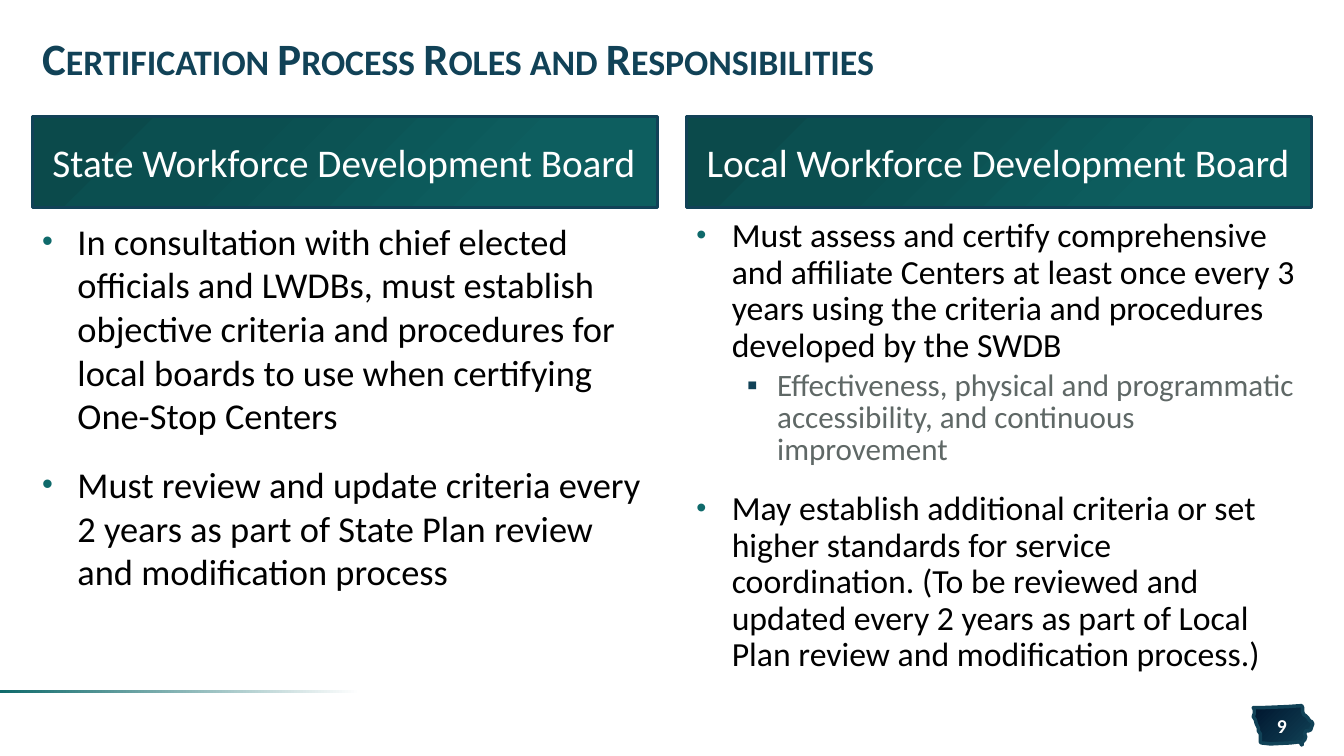
from lxml import etree
from pptx import Presentation
from pptx.dml.color import RGBColor
from pptx.enum.shapes import MSO_SHAPE
from pptx.enum.text import MSO_ANCHOR, PP_ALIGN
from pptx.oxml import parse_xml
from pptx.oxml.ns import qn
from pptx.util import Inches, Pt

RECT = MSO_SHAPE.RECTANGLE
TOP, MIDDLE = MSO_ANCHOR.TOP, MSO_ANCHOR.MIDDLE
LEFT, CENTER = PP_ALIGN.LEFT, PP_ALIGN.CENTER
NS = "http://schemas.openxmlformats.org/drawingml/2006/main"

FONT = "Calibri"
NAVY, TEAL, WHITE, BLACK, GRAY = "114257", "0F6A6B", "FFFFFF", "000000", "5F6866"
HEADING_STOPS = [(0, "0D5E5F"), (23, "0D5E5F"), (69, "0B4F50"), (97, "0B4A4B")]
BADGE_STOPS = [(0, "00162E"), (100, NAVY)]
RULE_STOPS = [(6, WHITE), (100, TEAL)]

TITLE = "Certification Process Roles and Responsibilities"
PAGE = "9"
MAIN, SUB = "main", "sub"
BULLETS = {
    MAIN: dict(char="•", color=TEAL, percent=85, margin=0.35, hang=0.35, before=18),
    SUB: dict(char="▪", color=NAVY, percent=100, margin=0.8, hang=0.3, before=5),
}
COLUMNS = [
    ("State Workforce Development Board", [
        (MAIN, 26, BLACK, 1.0, "In consultation with chief elected officials and LWDBs, must "
         "establish objective criteria and procedures for local boards to use when "
         "certifying One-Stop Centers"),
        (MAIN, 26, BLACK, 1.0, "Must review and update criteria every 2 years as part of "
         "State Plan review and modification process"),
    ]),
    ("Local Workforce Development Board", [
        (MAIN, 24.1, BLACK, 0.9, "Must assess and certify comprehensive and affiliate Centers "
         "at least once every 3 years using the criteria and procedures developed by the SWDB"),
        (SUB, 22.2, GRAY, 0.85, "Effectiveness, physical and programmatic accessibility, "
         "and continuous improvement"),
        (MAIN, 24.1, BLACK, 0.9, "May establish additional criteria or set higher standards for "
         "service coordination. (To be reviewed and updated every 2 years as part of "
         "Local Plan review and modification process.)"),
    ]),
]
STATE_OUTLINE = [
    (12.91, 7), (12.77, 7.01), (12.53, 7.02), (12.43, 7.02), (12.44, 7.04), (12.44, 7.08),
    (12.43, 7.11), (12.45, 7.14), (12.46, 7.18), (12.48, 7.22), (12.48, 7.25), (12.5, 7.28),
    (12.5, 7.32), (12.5, 7.36), (12.51, 7.37), (12.6, 7.38), (12.8, 7.37), (12.88, 7.36),
    (12.9, 7.37), (12.91, 7.39), (12.92, 7.38), (12.91, 7.37), (12.94, 7.34), (12.95, 7.31),
    (12.94, 7.28), (12.95, 7.25), (12.98, 7.25), (13, 7.24), (13.01, 7.21), (13.02, 7.18),
    (13.01, 7.16), (12.99, 7.15), (12.97, 7.12), (12.95, 7.1), (12.93, 7.09), (12.92, 7.06),
    (12.92, 7.02),
]
MARGIN, COL_W, COL_STEP = 0.32, 6.2, 6.49


def rgb(value):
    return RGBColor.from_string(value)


def set_gradient(sp, stops, angle=None):
    sp.fill.gradient()
    old = sp._element.spPr.find(qn("a:gradFill"))
    gs = "".join(f'<a:gs pos="{pos * 1000}"><a:srgbClr val="{color}"/></a:gs>'
                 for pos, color in stops)
    if angle is None:
        direction = '<a:path path="circle"><a:fillToRect l="100000" t="100000"/></a:path>'
    else:
        direction = f'<a:lin ang="{angle * 60000}" scaled="0"/>'
    new = parse_xml(f'<a:gradFill xmlns:a="{NS}" rotWithShape="1">'
                    f'<a:gsLst>{gs}</a:gsLst>{direction}</a:gradFill>')
    old.getparent().replace(old, new)


def set_line(sp, width):
    sp.shadow.inherit = False
    if width:
        sp.line.color.rgb = rgb(NAVY)
        sp.line.width = Pt(width)
    else:
        sp.line.fill.background()


def add_rect(s, box, stops, angle=None, width=0):
    sp = s.shapes.add_shape(RECT, *map(Inches, box))
    set_gradient(sp, stops, angle)
    set_line(sp, width)
    return sp


def add_box(s, box):
    return s.shapes.add_textbox(*map(Inches, box))


def set_frame(sp, anchor, side=0.1, edge=0.05):
    tf = sp.text_frame
    tf.word_wrap = True
    tf.vertical_anchor = anchor
    tf.margin_left = tf.margin_right = Inches(side)
    tf.margin_top = tf.margin_bottom = Inches(edge)
    return tf


def write(p, text, size, color, bold=False, align=LEFT):
    p.text = text
    p.alignment = align
    r = p.runs[0]
    r.font.name, r.font.size, r.font.bold = FONT, Pt(size), bold
    r.font.color.rgb = rgb(color)
    return r


def set_bullet(p, char, color, percent, margin, hang):
    pPr = p._p.get_or_add_pPr()
    pPr.set("marL", str(Inches(margin)))
    pPr.set("indent", str(-Inches(hang)))
    clr = etree.SubElement(pPr, qn("a:buClr"))
    etree.SubElement(clr, qn("a:srgbClr"), val=color)
    etree.SubElement(pPr, qn("a:buSzPct"), val=str(percent * 1000))
    etree.SubElement(pPr, qn("a:buFont"), typeface="Arial")
    etree.SubElement(pPr, qn("a:buChar"), char=char)


def add_column(s, left, heading, items):
    sp = add_rect(s, (left, 1.16, COL_W, 0.9), HEADING_STOPS, width=2)
    write(set_frame(sp, MIDDLE, 0.2, 0).paragraphs[0], heading, 28, WHITE)
    tf = set_frame(add_box(s, (left, 2.12, COL_W, 4.65)), TOP)
    for i, (kind, size, color, spacing, text) in enumerate(items):
        p = tf.add_paragraph() if i else tf.paragraphs[0]
        style = dict(BULLETS[kind])
        before = style.pop("before")
        set_bullet(p, **style)
        p.level = 1 if kind == SUB else 0
        p.line_spacing = spacing
        p.space_before = Pt(before if i else 0)
        write(p, text, size, color)


def add_badge(s):
    points = [(Inches(x), Inches(y)) for x, y in STATE_OUTLINE]
    builder = s.shapes.build_freeform(*points[0])
    builder.add_line_segments(points[1:], close=True)
    sp = builder.convert_to_shape()
    set_gradient(sp, BADGE_STOPS, 45)
    set_line(sp, 2.5)


def main():
    prs = Presentation()
    prs.slide_width, prs.slide_height = Inches(13.33), Inches(7.5)
    s = prs.slides.add_slide(prs.slide_layouts[6])
    add_badge(s)
    add_rect(s, (0, 6.85, 3.8, 0.03), RULE_STOPS, 180)
    p = set_frame(add_box(s, (MARGIN, 0.24, 12.69, 0.75)), MIDDLE).paragraphs[0]
    r = write(p, TITLE, 32, NAVY, True)
    r._r.get_or_add_rPr().set("cap", "small")
    p.line_spacing = 0.85
    for i, (heading, items) in enumerate(COLUMNS):
        add_column(s, MARGIN + i * COL_STEP, heading, items)
    tf = set_frame(add_box(s, (12.46, 7.08, 0.51, 0.23)), MIDDLE, 0)
    r = write(tf.paragraphs[0], PAGE, 14, WHITE, True, CENTER)
    r._r.get_or_add_rPr().set("spc", "50")
    prs.save("out.pptx")


if __name__ == "__main__":
    main()
